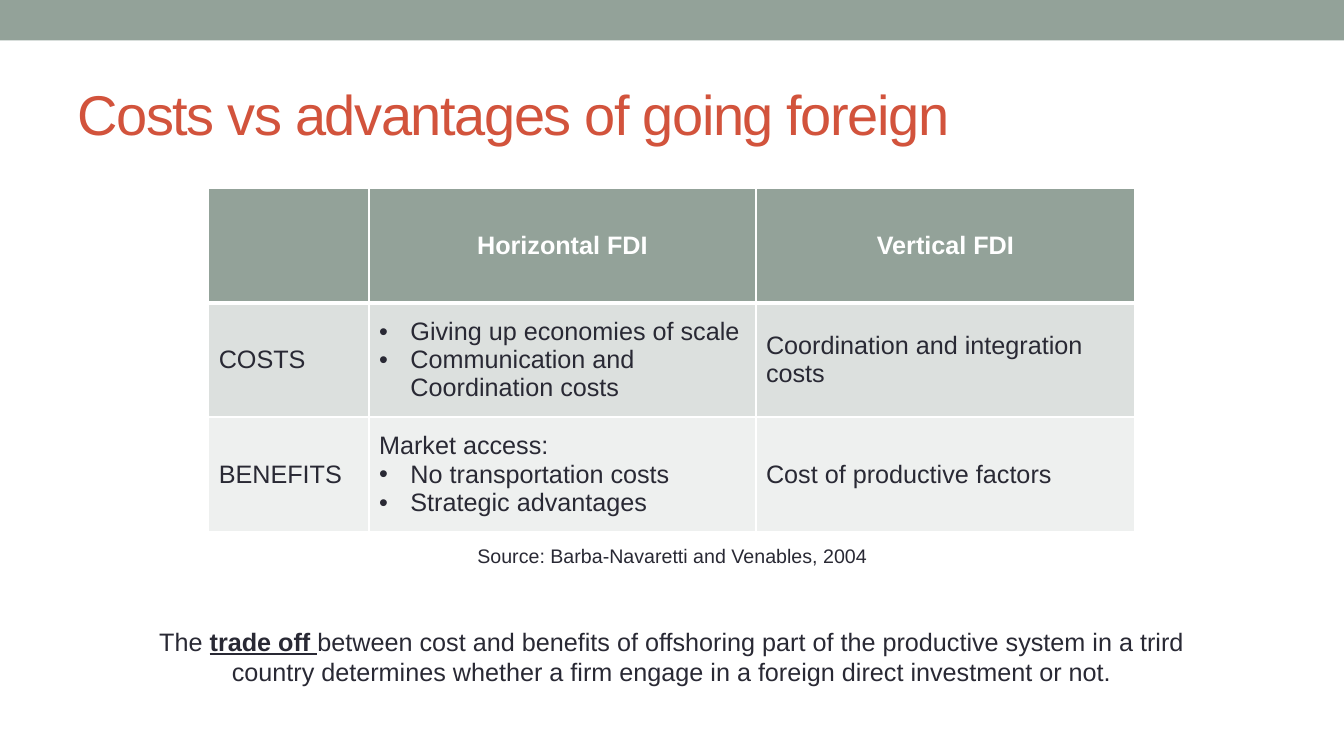
from dataclasses import dataclass

from lxml.etree import SubElement
from pptx import Presentation
from pptx.dml.color import RGBColor as RGB
from pptx.enum.shapes import MSO_SHAPE as Shape
from pptx.enum.text import MSO_ANCHOR as Anchor, MSO_AUTO_SIZE as AutoSize, PP_ALIGN as Align
from pptx.oxml.ns import qn
from pptx.util import Cm, Pt


@dataclass(frozen=True)
class Theme:
    font: str = "Arial"
    sage: RGB = RGB(0x93, 0xA2, 0x99)
    accent: RGB = RGB(0xD2, 0x53, 0x3C)
    ink: RGB = RGB(0x29, 0x29, 0x34)
    white: RGB = RGB(0xFF, 0xFF, 0xFF)
    bands: tuple = (RGB(0xDC, 0xE0, 0xDE), RGB(0xEE, 0xF0, 0xEF))
    title_size: int = 40
    body_size: int = 18
    source_size: int = 14


@dataclass(frozen=True)
class Box:
    left: float
    top: float
    width: float
    height: float

    def emu(self) -> tuple:
        return Cm(self.left), Cm(self.top), Cm(self.width), Cm(self.height)


@dataclass(frozen=True)
class Span:
    text: str
    strong: bool = False


@dataclass(frozen=True)
class Note:
    box: Box
    size: int
    spans: tuple


T = Theme()
BULLET = "• "
BULLET_INDENT = Cm(0.79)
COLUMNS = (4.04, 9.75, 9.55)
ROW_HEIGHT = 2.88
TABLE = Box(5.26, 4.75, sum(COLUMNS), 3 * ROW_HEIGHT)

# Each cell is a tuple of lines; a leading bullet marks a list item
ROWS = (
    (("",), ("Horizontal FDI",), ("Vertical FDI",)),
    (
        ("COSTS",),
        ("• Giving up economies of scale", "• Communication and Coordination costs"),
        ("Coordination and integration costs",),
    ),
    (
        ("BENEFITS",),
        ("Market access:", "• No transportation costs", "• Strategic advantages"),
        ("Cost of productive factors",),
    ),
)

NOTES = (
    Note(Box(7.19, 13.59, 19.51, 0.86), T.source_size,
         (Span("Source: Barba-Navaretti and Venables, 2004"),)),
    Note(Box(3.35, 15.65, 27.15, 1.8), T.body_size,
         (Span("The "), Span("trade off ", strong=True),
          Span("between cost and benefits of offshoring part of the productive system "
               "in a trird country determines whether a firm engage in a foreign "
               "direct investment or not."))),
)


def style(font, size: int, color: RGB, bold: bool = False) -> None:
    font.name, font.size, font.bold = T.font, Pt(size), bold
    font.color.rgb = color


def add_bar(s, box: Box) -> None:
    bar = s.shapes.add_shape(Shape.RECTANGLE, *box.emu())
    bar.shadow.inherit = False
    bar.fill.solid()
    bar.fill.fore_color.rgb = T.sage
    bar.line.fill.background()


def set_title(s, text: str, box: Box) -> None:
    title = s.shapes.title
    title.left, title.top, title.width, title.height = box.emu()
    tf = title.text_frame
    tf.text = text
    tf.auto_size, tf.vertical_anchor = AutoSize.NONE, Anchor.MIDDLE
    p = tf.paragraphs[0]
    p.alignment = Align.LEFT
    r = p.runs[0]
    style(r.font, T.title_size, T.accent)
    r.font._element.set("spc", "-100")


def add_bullet(p) -> None:
    pPr = p._p.get_or_add_pPr()
    pPr.set("marL", str(BULLET_INDENT))
    pPr.set("indent", str(-BULLET_INDENT))
    SubElement(pPr, qn("a:buFont"), typeface=T.font)
    SubElement(pPr, qn("a:buChar"), char=BULLET.strip())


def add_borders(cell, row: int) -> None:
    widths = {"L": 1, "R": 1, "T": 3 if row == 1 else 1, "B": 3 if row == 0 else 1}
    tcPr = cell._tc.get_or_add_tcPr()
    for side, width in widths.items():
        ln = SubElement(tcPr, qn(f"a:ln{side}"), w=str(Pt(width)))
        fill = SubElement(ln, qn("a:solidFill"))
        SubElement(fill, qn("a:srgbClr"), val=str(T.white))


def fill_cell(cell, lines: tuple, row: int) -> None:
    header = row == 0
    add_borders(cell, row)
    cell.fill.solid()
    cell.fill.fore_color.rgb = T.sage if header else T.bands[row - 1]
    cell.vertical_anchor = Anchor.MIDDLE
    tf = cell.text_frame
    tf.text = "\n".join(line.removeprefix(BULLET) for line in lines)
    for p, line in zip(tf.paragraphs, lines):
        p.alignment = Align.CENTER if header else Align.LEFT
        if line.startswith(BULLET):
            add_bullet(p)
        for r in p.runs:
            style(r.font, T.body_size, T.white if header else T.ink, header)


def add_fdi_table(s) -> None:
    table = s.shapes.add_table(len(ROWS), len(COLUMNS), *TABLE.emu()).table
    for column, width in zip(table.columns, COLUMNS):
        column.width = Cm(width)
    for i, row in enumerate(ROWS):
        table.rows[i].height = Cm(ROW_HEIGHT)
        for j, lines in enumerate(row):
            fill_cell(table.cell(i, j), lines, i)


def add_note(s, note: Note) -> None:
    tf = s.shapes.add_textbox(*note.box.emu()).text_frame
    tf.word_wrap = True
    p = tf.paragraphs[0]
    p.alignment = Align.CENTER
    for span in note.spans:
        r = p.add_run()
        r.text = span.text
        style(r.font, note.size, T.ink, span.strong)
        r.font.underline = span.strong


def main() -> None:
    prs = Presentation()
    prs.slide_width, prs.slide_height = Cm(33.87), Cm(19.05)
    s = prs.slides.add_slide(prs.slide_layouts[5])

    # Heading
    add_bar(s, Box(0, 0, 33.87, 1.02))
    set_title(s, "Costs vs advantages of going foreign", Box(1.7, 1.47, 30.48, 2.74))

    # Comparison and notes
    add_fdi_table(s)
    for note in NOTES:
        add_note(s, note)

    prs.save("out.pptx")


if __name__ == "__main__":
    main()
